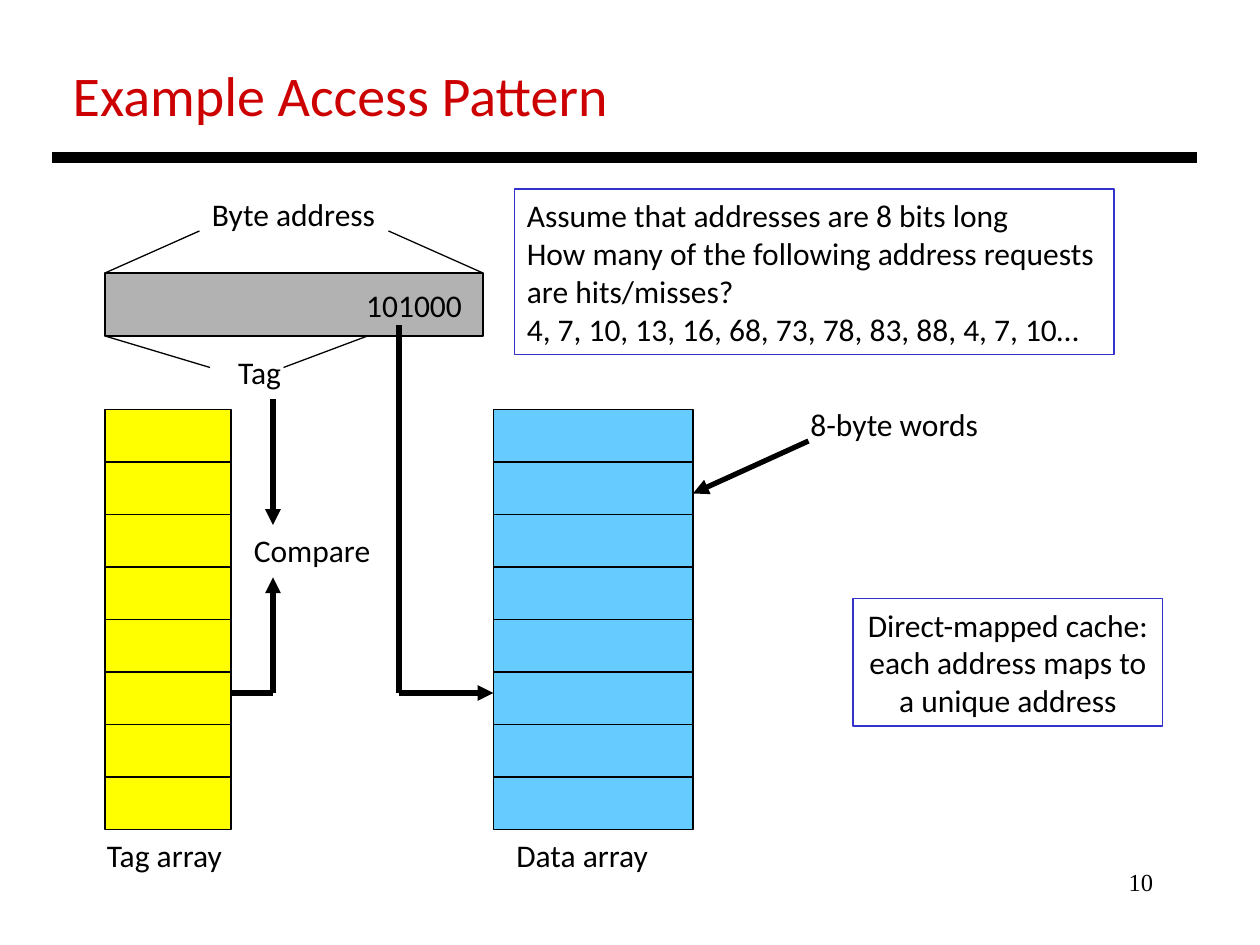
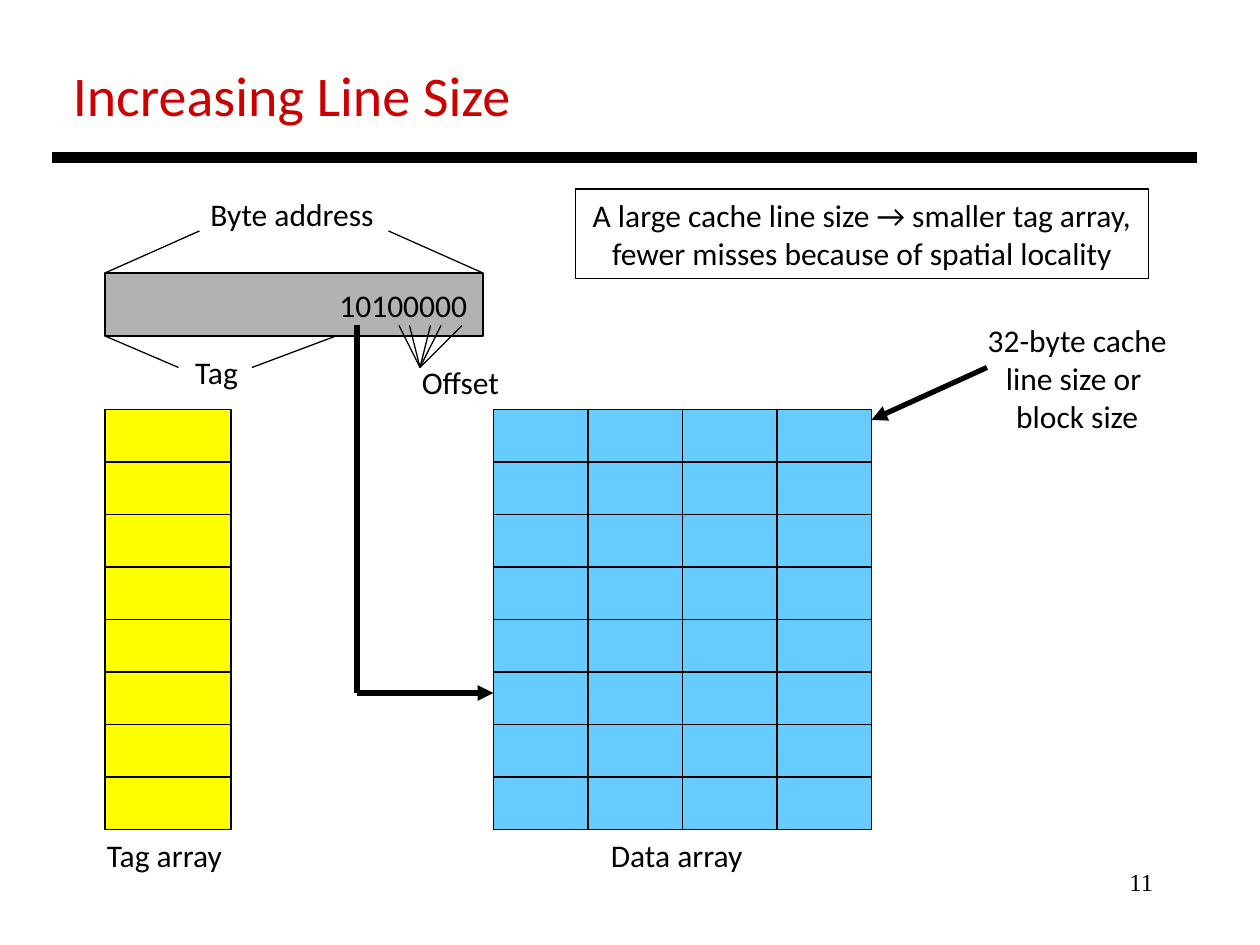
from lxml import etree
from pptx import Presentation
from pptx.dml.color import RGBColor
from pptx.enum.shapes import MSO_CONNECTOR, MSO_SHAPE
from pptx.enum.text import MSO_ANCHOR, PP_ALIGN
from pptx.oxml.ns import qn
from pptx.util import Inches, Pt

RECT, STRAIGHT = MSO_SHAPE.RECTANGLE, MSO_CONNECTOR.STRAIGHT
LEFT, MID, RIGHT = PP_ALIGN.LEFT, PP_ALIGN.CENTER, PP_ALIGN.RIGHT
MIDDLE = MSO_ANCHOR.MIDDLE

BLACK = RGBColor(0x00, 0x00, 0x00)
RED = RGBColor(0xCC, 0x00, 0x00)
BLUE = RGBColor(0x33, 0x33, 0xCC)
SKY = RGBColor(0x66, 0xCC, 0xFF)
YELLOW = RGBColor(0xFF, 0xFF, 0x00)
GREY = RGBColor(0xB2, 0xB2, 0xB2)
SANS, SERIF = "Calibri", "Times New Roman"

# Grid: 12 units to the inch, so a slide is 120 by 90 units
UNIT = Inches(1) / 12
WIDE, HIGH = 120, 90
THIN, BOLD, BAND = 0.75, 3, 6
ROWS, STEP, TOP = 8, 5, 39
TAG_X, TAG_W, DATA_X = 10, 12, 47
BAR = (10, 26, 36, 6)
HIT = TOP + 5.4 * STEP  # height of the selected row

# Labels: text lines, x, y, width, alignment, outline
# Paths: points joined by straight lines
SLIDES = [
    dict(
        title="Example Access Pattern", title_w=54, page="10",
        bits="101000", inset=2, cols=1, col_w=19,
        labels=[
            (["Byte address"], 19, 18, 18.1, LEFT, None),
            (["Tag"], 21.5, 33, 6.6, LEFT, None),
            (["Compare"], 23, 50, 13.7, LEFT, None),
            (["Data array"], 48, 79, 15.1, LEFT, None),
            (["8-byte words"], 76, 38, 18.6, LEFT, None),
            (["Assume that addresses are 8 bits long",
              "How many of the following address requests",
              "are hits/misses?",
              "4, 7, 10, 13, 16, 68, 73, 78, 83, 88, 4, 7, 10…"],
             49, 18, 57.1, LEFT, BLUE),
            (["Direct-mapped cache:", "each address maps to",
              "a unique address"], 81.25, 57, 29.5, MID, BLUE),
        ],
        thin=[[(27, 35), (35, 32)], [(10, 32), (20, 35)]],
        arrows=[
            [(77, 42), (66, 47)],
            [(38, 31), (38, HIT), (DATA_X, HIT)],
            [(26, 38), (26, 50)],
            [(22, HIT), (26, HIT), (26, 55)],
        ],
    ),
    dict(
        title="Increasing Line Size", title_w=44.5, page="11",
        bits="10100000", inset=1.5, cols=4, col_w=9,
        labels=[
            (["Byte address"], 18.85, 18, 18.1, LEFT, None),
            (["Tag"], 17.4, 33, 6.6, LEFT, None),
            (["Offset"], 39, 34, 9.8, LEFT, None),
            (["Data array"], 57, 79, 15.1, LEFT, None),
            (["32-byte cache", "line size or ", "block size"],
             92.75, 30, 19.7, MID, None),
            (["A large cache line size → smaller tag array,",
              "fewer misses because of spatial locality"],
             54.8, 18, 54.6, MID, BLACK),
        ],
        thin=[[(24, 35), (32, 32)], [(10, 32), (17, 35)]]
        + [[(x, 31), (40, 35)] for x in (38, 39, 41, 42, 44)],
        arrows=[
            [(94, 35), (83, 40)],
            [(34, 31), (34, HIT), (DATA_X, HIT)],
        ],
    ),
]

# What both slides share
TAG_NAME = (["Tag array"], 9, 79, 13.4, LEFT, None)
ROOF = [[(19, 22), (10, 26)], [(37, 22), (46, 26)]]


def units(*nums):
    return [round(n * UNIT) for n in nums]


def write(shape, lines, size=18, font=SANS, color=BLACK, align=LEFT,
          wrap=False):
    frame = shape.text_frame
    frame.word_wrap = wrap
    frame.text = "\n".join(lines)
    for para in frame.paragraphs:
        para.alignment = align
        para.font.size, para.font.name = Pt(size), font
        para.font.color.rgb = color
    return frame


def box(slide, x, y, w, h, fill=None, edge=BLACK):
    shape = slide.shapes.add_shape(RECT, *units(x, y, w, h))
    shape.shadow.inherit = False
    if fill is None:
        shape.fill.background()
    else:
        shape.fill.solid()
        shape.fill.fore_color.rgb = fill
    shape.line.color.rgb, shape.line.width = edge, Pt(THIN)
    return shape


def trace(slide, points, width, arrow=False):
    for start, end in zip(points, points[1:]):
        line = slide.shapes.add_connector(STRAIGHT, *units(*start, *end))
        line.line.color.rgb, line.line.width = BLACK, Pt(width)
        props = line._element.spPr
        etree.SubElement(props, qn("a:effectLst"))
        if arrow and end == points[-1]:
            tip = etree.SubElement(props.find(qn("a:ln")), qn("a:tailEnd"))
            tip.set("type", "triangle")


def label(slide, lines, x, y, w, align, edge):
    h = 1.2 + 3.65 * len(lines)
    if edge is None:
        shape = slide.shapes.add_textbox(*units(x, y, w, h))
    else:
        shape = box(slide, x, y, w, h, edge=edge)
    write(shape, lines, align=align)


def stack(slide, x, w, fill):
    for row in range(ROWS):
        box(slide, x, TOP + row * STEP, w, STEP, fill)


def frame_up(slide, title, width, page):
    # Title, band and page number
    head = slide.shapes.add_textbox(*units(5.75, 5.15, width, 7.7))
    write(head, [title], 32, color=RED)
    trace(slide, [(5, 15), (114, 15)], BAND)
    foot = slide.shapes.add_textbox(*units(86, 82, 25, 6))
    write(foot, [page], 14, SERIF, align=RIGHT, wrap=True)


def build(deck, data):
    slide = deck.slides.add_slide(deck.slide_layouts[6])
    frame_up(slide, data["title"], data["title_w"], data["page"])

    # Arrays
    stack(slide, TAG_X, TAG_W, YELLOW)
    for col in range(data["cols"]):
        stack(slide, DATA_X + col * data["col_w"], data["col_w"], SKY)

    # Address bar
    frame = write(box(slide, *BAR, GREY), [data["bits"]],
                  align=RIGHT, wrap=True)
    frame.vertical_anchor = MIDDLE
    frame.margin_right = units(data["inset"])[0]

    # Lines, arrows and labels
    for points in ROOF + data["thin"]:
        trace(slide, points, THIN)
    for points in data["arrows"]:
        trace(slide, points, BOLD, arrow=True)
    for item in [TAG_NAME] + data["labels"]:
        label(slide, *item)


def main():
    deck = Presentation()
    deck.slide_width, deck.slide_height = units(WIDE, HIGH)
    for data in SLIDES:
        build(deck, data)
    deck.save("out.pptx")


if __name__ == "__main__":
    main()
